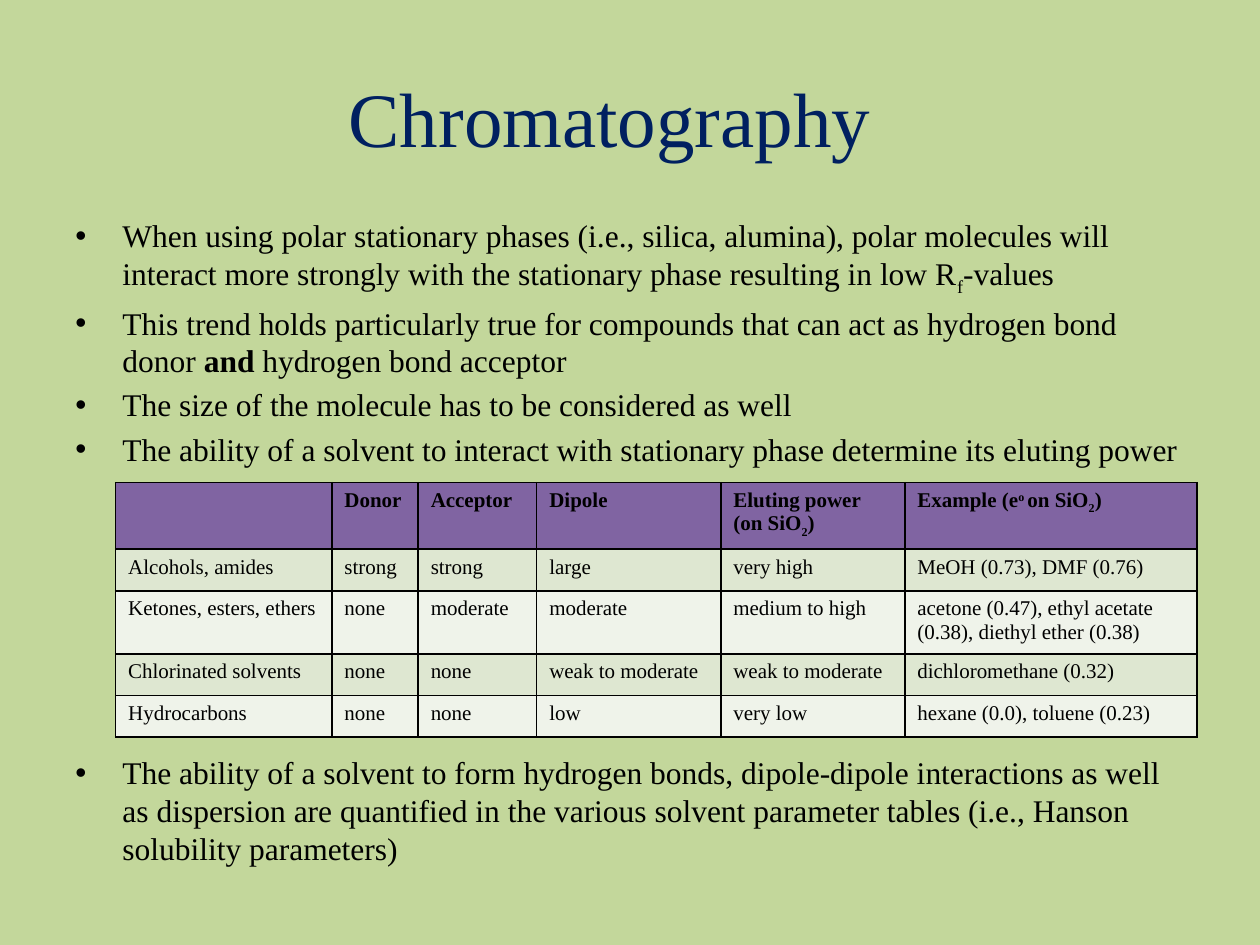
from lxml import etree
from pptx import Presentation
from pptx.dml.color import RGBColor
from pptx.enum.text import MSO_ANCHOR, PP_ALIGN
from pptx.oxml.ns import qn
from pptx.util import Cm, Pt

CENTER = PP_ALIGN.CENTER
MIDDLE = MSO_ANCHOR.MIDDLE

FONT = "Times New Roman"
BACKGROUND = RGBColor(0xC3, 0xD7, 0x9B)
NAVY = RGBColor(0x00, 0x20, 0x60)
BLACK = RGBColor(0x00, 0x00, 0x00)
PURPLE = RGBColor(0x80, 0x64, 0xA2)
BAND_DARK = RGBColor(0xDE, 0xE7, 0xD1)
BAND_LIGHT = RGBColor(0xEF, 0xF3, 0xEA)

PLAIN, BOLD, SUB, SUPER = "plain", "bold", "sub", "super"
BASELINES = {SUB: "-25000", SUPER: "30000"}

POLARITY_POINTS = [
    [("When using polar stationary phases (i.e., silica, alumina), polar molecules "
      "will interact more strongly with the stationary phase resulting in low R", PLAIN),
     ("f", SUB), ("-values", PLAIN)],
    [("This trend holds particularly true for compounds that can act as hydrogen "
      "bond donor ", PLAIN), ("and", BOLD), (" hydrogen bond acceptor", PLAIN)],
    [("The size of the molecule has to be considered as well", PLAIN)],
    [("The ability of a solvent to interact with stationary phase determine its "
      "eluting power", PLAIN)],
]
PARAMETER_POINTS = [
    [("The ability of a solvent to form hydrogen bonds, dipole-dipole interactions "
      "as well as dispersion are quantified in the various solvent parameter tables "
      "(i.e., Hanson solubility parameters)", PLAIN)],
]
HEADINGS = [
    [],
    [("Donor", PLAIN)],
    [("Acceptor", PLAIN)],
    [("Dipole", PLAIN)],
    [("Eluting power (on SiO", PLAIN), ("2", SUB), (")", PLAIN)],
    [("Example (e", PLAIN), ("o ", SUPER), ("on SiO", PLAIN), ("2", SUB), (")", PLAIN)],
]
SOLVENTS = [
    ["Alcohols, amides", "strong", "strong", "large", "very high",
     "MeOH (0.73), DMF (0.76)"],
    ["Ketones, esters, ethers", "none", "moderate", "moderate", "medium to high",
     "acetone (0.47), ethyl acetate (0.38), diethyl ether (0.38)"],
    ["Chlorinated solvents", "none", "none", "weak to moderate", "weak to moderate",
     "dichloromethane (0.32)"],
    ["Hydrocarbons", "none", "none", "low", "very low",
     "hexane (0.0), toluene (0.23)"],
]
COLUMN_WIDTHS = [4.36, 1.74, 2.39, 3.71, 3.71, 5.89]
ROW_HEIGHTS = [1.25, 0.84, 1.2, 0.84, 0.84]


def add_runs(paragraph, pieces, size, color=BLACK, bold=False):
    for text, style in pieces:
        run = paragraph.add_run()
        run.text = text
        run.font.name = FONT
        run.font.size = Pt(size)
        run.font.color.rgb = color
        run.font.bold = bold or style == BOLD
        if style in BASELINES:
            run._r.get_or_add_rPr().set("baseline", BASELINES[style])


def format_title(slide):
    title = slide.shapes.title
    title.left, title.top = Cm(1.27), Cm(0.76)
    title.width, title.height = Cm(22.86), Cm(3.18)
    frame = title.text_frame
    frame.vertical_anchor = MIDDLE
    frame.margin_right = Cm(1.07)
    heading = frame.paragraphs[0]
    heading.alignment = CENTER
    add_runs(heading, [("Chromatography", PLAIN)], 44, NAVY)


def set_bullet(paragraph):
    properties = paragraph._p.get_or_add_pPr()
    properties.set("marL", str(Cm(0.95)))
    properties.set("indent", str(Cm(-0.95)))
    etree.SubElement(properties, qn("a:buFont"), typeface="Arial")
    etree.SubElement(properties, qn("a:buChar"), char="•")


def add_bullets(slide, top, height, points):
    frame = slide.shapes.add_textbox(Cm(1.27), Cm(top), Cm(22.86), Cm(height)).text_frame
    frame.word_wrap = True
    for index, pieces in enumerate(points):
        point = frame.add_paragraph() if index else frame.paragraphs[0]
        point.space_before = Pt(3.6)
        set_bullet(point)
        add_runs(point, pieces, 18)


def set_borders(cell):
    properties = cell._tc.get_or_add_tcPr()
    for side in ("lnL", "lnR", "lnT", "lnB"):
        border = etree.SubElement(properties, qn(f"a:{side}"), w=str(Pt(1)))
        fill = etree.SubElement(border, qn("a:solidFill"))
        etree.SubElement(fill, qn("a:srgbClr"), val=str(BLACK))


def fill_cell(cell, pieces, color, bold):
    set_borders(cell)
    cell.fill.solid()
    cell.fill.fore_color.rgb = color
    add_runs(cell.text_frame.paragraphs[0], pieces, 12, bold=bold)


def add_solvent_table(slide):
    rows = [HEADINGS] + [[[(text, PLAIN)] for text in solvent] for solvent in SOLVENTS]
    table = slide.shapes.add_table(
        len(rows), len(HEADINGS), Cm(2.33), Cm(9.73),
        Cm(sum(COLUMN_WIDTHS)), Cm(sum(ROW_HEIGHTS))).table
    for column, width in zip(table.columns, COLUMN_WIDTHS):
        column.width = Cm(width)
    for row, height in zip(table.rows, ROW_HEIGHTS):
        row.height = Cm(height)
    for row_index, row in enumerate(rows):
        is_header = row_index == 0
        band = BAND_DARK if row_index % 2 else BAND_LIGHT
        for column_index, pieces in enumerate(row):
            fill_cell(table.cell(row_index, column_index), pieces,
                      PURPLE if is_header else band, is_header)


def main():
    presentation = Presentation()
    presentation.slide_width, presentation.slide_height = Cm(25.4), Cm(19.05)
    slide = presentation.slides.add_slide(presentation.slide_layouts[5])
    slide.background.fill.solid()
    slide.background.fill.fore_color.rgb = BACKGROUND
    format_title(slide)
    add_bullets(slide, 4.24, 5.4, POLARITY_POINTS)
    add_solvent_table(slide)
    add_bullets(slide, 15.06, 3.35, PARAMETER_POINTS)
    presentation.save("out.pptx")


if __name__ == "__main__":
    main()
